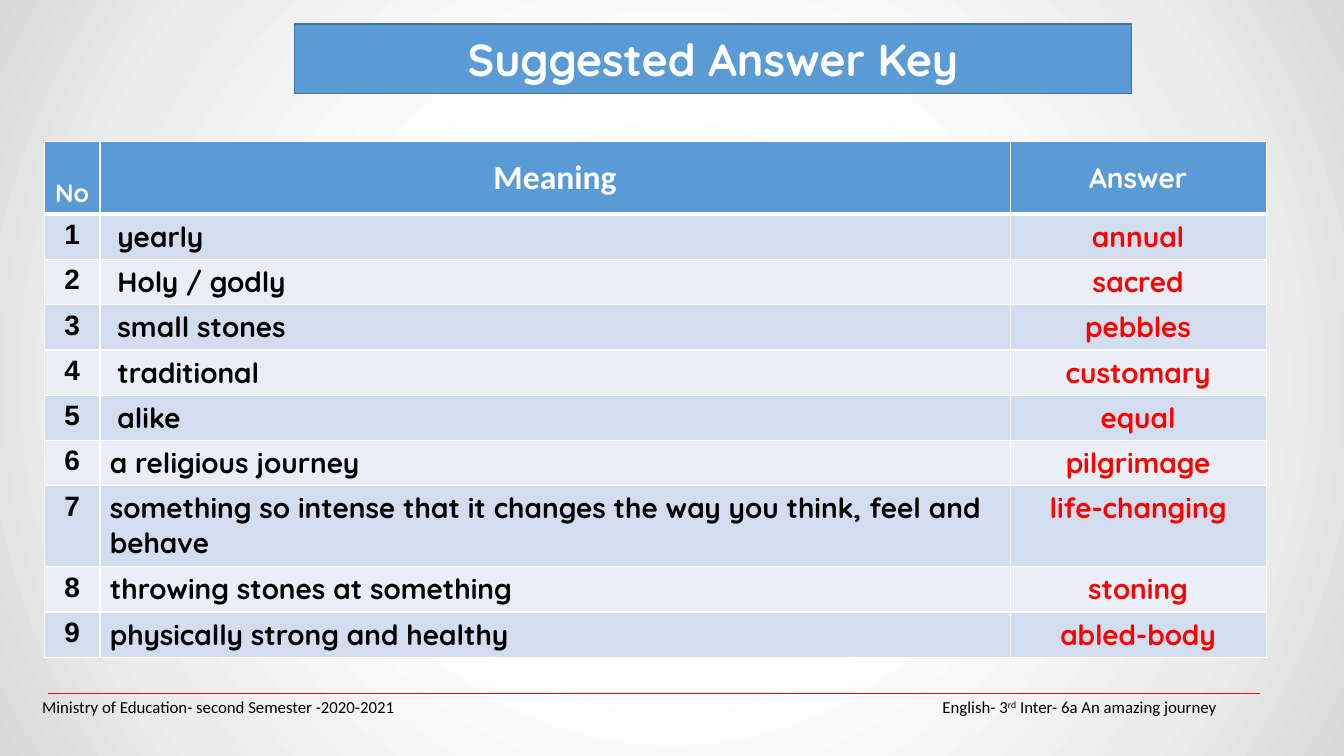
"""Build the Suggested Answer Key slide."""
from dataclasses import dataclass

from lxml import etree
from pptx import Presentation
from pptx.dml.color import RGBColor
from pptx.enum.shapes import MSO_CONNECTOR
from pptx.enum.text import MSO_ANCHOR, PP_ALIGN
from pptx.oxml.ns import qn
from pptx.util import Cm, Pt

LEFT, CENTER = PP_ALIGN.LEFT, PP_ALIGN.CENTER
TOP, MIDDLE, BOTTOM = MSO_ANCHOR.TOP, MSO_ANCHOR.MIDDLE, MSO_ANCHOR.BOTTOM
STRAIGHT = MSO_CONNECTOR.STRAIGHT

COLORS = {
    "blue": "5B9BD5", "outline": "43739E", "white": "FFFFFF", "black": "000000",
    "red": "FF0000", "odd": "D2DEEF", "even": "EAEFF7",
}
BACKDROP = {0: "F2F2F2", 39: "FFFFFF", 78: "ECECEC", 100: "D9D9D9"}
COLUMN_WIDTHS = (1.4, 22.94, 6.45)
HEADER_HEIGHT, LINE_HEIGHT, DOUBLE_HEIGHT = 1.84, 1.14, 2.04
TEXT_MARGIN, INDENTED_MARGIN = 0.25, 0.44


@dataclass
class Entry:
    """One meaning with its answer."""
    meaning: str
    answer: str
    margin: float = TEXT_MARGIN
    height: float = LINE_HEIGHT


@dataclass
class CellStyle:
    """The look of one table cell."""
    fill: str
    color: str
    size: int = 20
    font: str = "Quicksand"
    align: PP_ALIGN = CENTER
    anchor: MSO_ANCHOR = TOP
    margin: float = TEXT_MARGIN
    bottom_line: int = 1


ENTRIES = [
    Entry("yearly", "annual", INDENTED_MARGIN),
    Entry("Holy / godly", "sacred", INDENTED_MARGIN),
    Entry("small stones", "pebbles", INDENTED_MARGIN),
    Entry("traditional", "customary", INDENTED_MARGIN),
    Entry("alike", "equal", INDENTED_MARGIN),
    Entry("a religious journey", "pilgrimage"),
    Entry("something so intense that it changes the way you think, feel and behave",
          "life-changing", height=DOUBLE_HEIGHT),
    Entry("throwing stones at something", "stoning"),
    Entry("physically strong and healthy", "abled-body"),
]


def rgb(name: str) -> RGBColor:
    """Look up a named colour."""
    return RGBColor.from_string(COLORS[name])


def add_text(para, text: str, *, size: int, color: str, font: str = "Quicksand",
             bold: bool = True, align: PP_ALIGN = LEFT):
    """Add a formatted span to a paragraph and return it."""
    para.alignment = align
    span = para.add_run()
    span.text = text
    span.font.name, span.font.size, span.font.bold = font, Pt(size), bold
    span.font.color.rgb = rgb(color)
    return span


def paint_background(slide) -> None:
    """Give the slide a circular grey gradient."""
    slide.background.fill.solid()
    holder = slide.element.find(".//" + qn("p:bgPr"))
    holder.remove(holder[0])
    gradient = etree.Element(qn("a:gradFill"), rotWithShape="1")
    stops = etree.SubElement(gradient, qn("a:gsLst"))
    for position, color in BACKDROP.items():
        stop = etree.SubElement(stops, qn("a:gs"), pos=str(position * 1000))
        etree.SubElement(stop, qn("a:srgbClr"), val=color)
    circle = etree.SubElement(gradient, qn("a:path"), path="circle")
    etree.SubElement(circle, qn("a:fillToRect"), l="50000", t="50000", r="50000", b="50000")
    holder.insert(0, gradient)


def add_title(slide) -> None:
    """Fill and place the title banner."""
    title = slide.shapes.title
    title.left, title.top, title.width, title.height = Cm(7.42), Cm(0.6), Cm(21.1), Cm(1.76)
    title.fill.solid()
    title.fill.fore_color.rgb = rgb("blue")
    title.line.color.rgb = rgb("outline")
    title.line.width = Pt(1)
    title.text_frame.vertical_anchor = MIDDLE
    add_text(title.text_frame.paragraphs[0], "Suggested Answer Key",
             size=32, color="white", align=CENTER)


def draw_borders(cell, widths: dict[str, int]) -> None:
    """Draw white borders of the given widths in points."""
    properties = cell._tc.get_or_add_tcPr()
    for side, width in widths.items():
        line = etree.SubElement(properties, qn(f"a:ln{side}"), w=str(Pt(width)))
        paint = etree.SubElement(line, qn("a:solidFill"))
        etree.SubElement(paint, qn("a:srgbClr"), val=COLORS["white"])


def write_cell(cell, text: str, style: CellStyle, top_line: int = 1) -> None:
    """Write, fill and border one cell."""
    draw_borders(cell, {"L": 1, "R": 1, "T": top_line, "B": style.bottom_line})
    cell.fill.solid()
    cell.fill.fore_color.rgb = rgb(style.fill)
    cell.vertical_anchor = style.anchor
    cell.margin_left = Cm(style.margin)
    add_text(cell.text_frame.paragraphs[0], text, size=style.size, color=style.color,
             font=style.font, align=style.align)


def add_answer_table(slide) -> None:
    """Add the table of meanings and answers."""
    heights = [HEADER_HEIGHT] + [entry.height for entry in ENTRIES]
    table = slide.shapes.add_table(len(heights), len(COLUMN_WIDTHS), Cm(1.12), Cm(3.56),
                                   Cm(sum(COLUMN_WIDTHS)), Cm(sum(heights))).table
    for column, width in zip(table.columns, COLUMN_WIDTHS):
        column.width = Cm(width)
    for row, height in zip(table.rows, heights):
        row.height = Cm(height)

    headers = {
        "No": CellStyle("blue", "white", 18, anchor=BOTTOM, bottom_line=3),
        "Meaning": CellStyle("blue", "white", 24, "Calibri", anchor=MIDDLE, bottom_line=3),
        "Answer": CellStyle("blue", "white", anchor=MIDDLE, bottom_line=3),
    }
    for column, (text, style) in enumerate(headers.items()):
        write_cell(table.cell(0, column), text, style)

    for number, entry in enumerate(ENTRIES, start=1):
        band = "odd" if number % 2 else "even"
        contents = (
            (str(number), CellStyle(band, "black", font="Arial")),
            (entry.meaning, CellStyle(band, "black", align=LEFT, margin=entry.margin)),
            (entry.answer, CellStyle(band, "red")),
        )
        for column, (text, style) in enumerate(contents):
            write_cell(table.cell(number, column), text, style, 3 if number == 1 else 1)


def add_footer(slide) -> None:
    """Add the red rule and the footer line below it."""
    rule = slide.shapes.add_connector(STRAIGHT, Cm(1.21), Cm(17.47), Cm(31.75), Cm(17.47))
    rule.line.color.rgb = rgb("red")
    rule.line.width = Pt(0.5)
    etree.SubElement(rule.element.spPr, qn("a:effectLst"))

    box = slide.shapes.add_textbox(Cm(0.81), Cm(17.4), Cm(31.42), Cm(0.8))
    box.text_frame.word_wrap = True
    box.text_frame.vertical_anchor = MIDDLE
    para = box.text_frame.paragraphs[0]
    look = {"size": 12, "color": "black", "font": "Calibri", "bold": False}
    add_text(para, "Ministry of Education- second Semester -2020-2021\tEnglish- 3", **look)
    ordinal = add_text(para, "rd", **look)
    ordinal.font._element.set("baseline", "30000")
    add_text(para, " Inter- 6a An amazing journey", **look)
    tabs = etree.SubElement(para._p.get_or_add_pPr(), qn("a:tabLst"))
    etree.SubElement(tabs, qn("a:tab"), pos=str(Cm(29.6)), algn="r")


def main() -> None:
    """Build and save the deck."""
    deck = Presentation()
    deck.slide_width, deck.slide_height = Cm(33.87), Cm(19.05)
    slide = deck.slides.add_slide(deck.slide_layouts[5])
    paint_background(slide)
    add_title(slide)
    add_answer_table(slide)
    add_footer(slide)
    deck.save("out.pptx")


if __name__ == "__main__":
    main()
